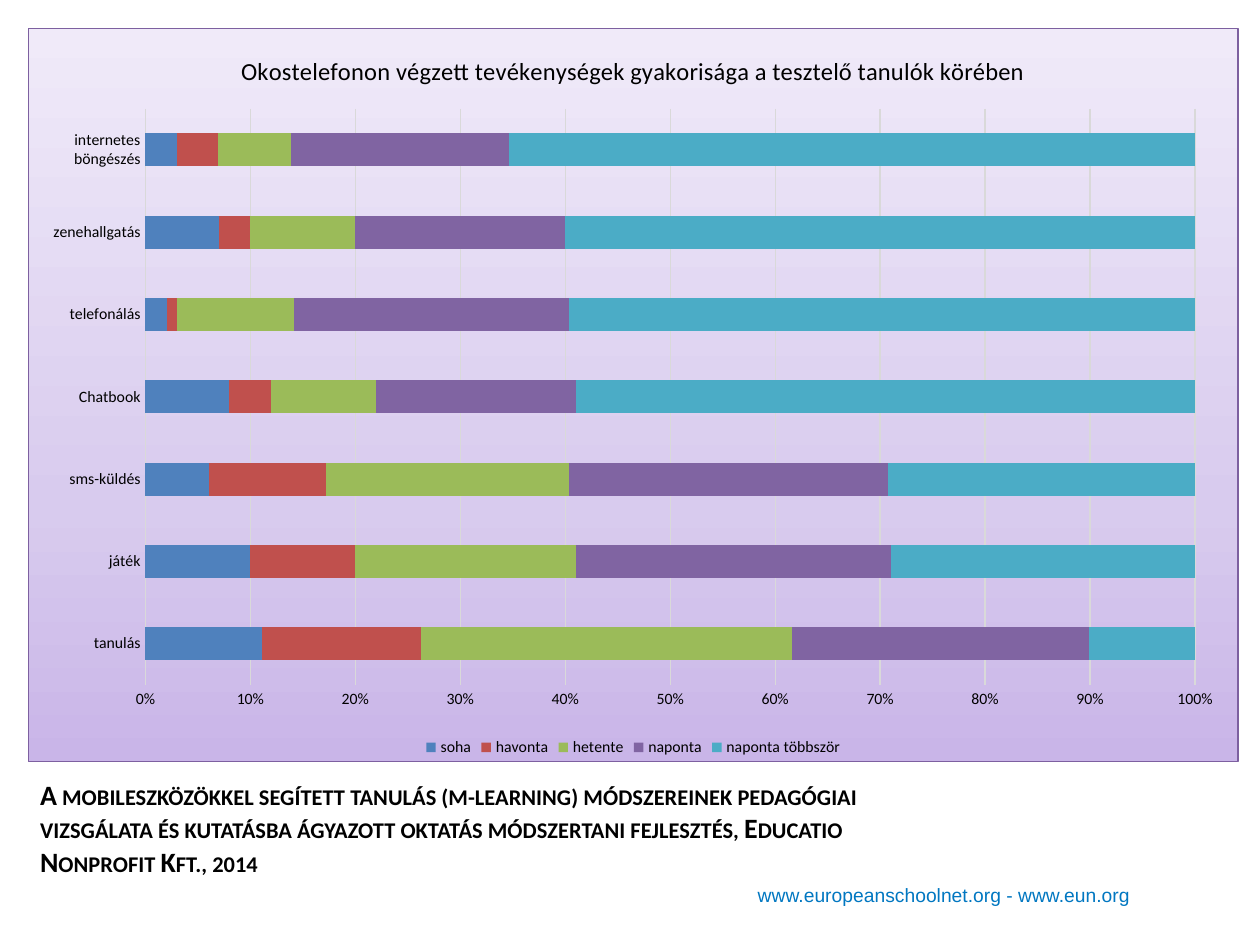
from dataclasses import dataclass, field

from lxml import etree
from pptx import Presentation
from pptx.chart.data import CategoryChartData
from pptx.dml.color import RGBColor
from pptx.enum.chart import XL_CHART_TYPE as ChartType, XL_LEGEND_POSITION as LegendPos
from pptx.enum.chart import XL_TICK_MARK as Tick
from pptx.enum.text import MSO_ANCHOR as Anchor, PP_ALIGN as Align
from pptx.oxml import parse_xml
from pptx.oxml.ns import nsdecls, qn
from pptx.util import Inches, Pt

BLACK, GRID = "000000", "D9D9D9"


@dataclass
class Series:
    name: str
    color: str
    values: tuple


@dataclass
class Label:
    text: str
    box: tuple
    font: dict
    align: Align = Align.LEFT
    anchor: Anchor = Anchor.TOP
    run_attrs: dict = field(default_factory=dict)


CATEGORIES = ["tanulás", "játék", "sms-küldés", "Chatbook", "telefonálás",
              "zenehallgatás", "internetes böngészés"]
SERIES = [
    Series("soha", "4F81BD", (11, 10, 6, 8, 2, 7, 3)),
    Series("havonta", "C0504D", (15, 10, 11, 4, 1, 3, 4)),
    Series("hetente", "9BBB59", (35, 21, 23, 10, 11, 10, 7)),
    Series("naponta", "8064A2", (28, 30, 30, 19, 26, 20, 21)),
    Series("naponta többször", "4BACC6", (10, 29, 29, 59, 59, 60, 66)),
]
TITLE = "Okostelefonon végzett tevékenységek gyakorisága a tesztelő tanulók körében"
GRADIENT = [(0, "C9B5E8"), (35, "D8CBEE"), (100, "F0EAF9")]
CHART_BOX = (0.22, 0.22, 9.61, 5.83)
PLOT_BOX = (0.93, 0.64, 8.34, 4.58)  # inches inside the chart

SOURCE = Label(
    "A mobileszközökkel segített tanulás (m-learning) módszereinek pedagógiai "
    "vizsgálata és kutatásba ágyazott oktatás módszertani fejlesztés, "
    "Educatio Nonprofit Kft., 2014",
    (0.22, 6.12, 6.69, 0.91), {"name": "Calibri", "size": Pt(16), "bold": True},
    run_attrs={"cap": "small"})
WEB = Label("www.europeanschoolnet.org - www.eun.org", (5.63, 6.96, 3.44, 0.29),
            {"name": "Arial", "size": Pt(11), "color": "0177C1"}, Align.RIGHT, Anchor.MIDDLE)


def rgb(value: str) -> RGBColor:
    return RGBColor.from_string(value)


def set_font(font, color: str = BLACK, **values) -> None:
    for name, value in values.items():
        setattr(font, name, value)
    font.color.rgb = rgb(color)


def add_outline(s, box: tuple):
    """Invisible rectangular outline that carries text."""
    x, y, w, h = map(Inches, box)
    builder = s.shapes.build_freeform(x, y)
    builder.add_line_segments([(x + w, y), (x + w, y + h), (x, y + h)], close=True)
    sp = builder.convert_to_shape()
    sp.shadow.inherit = False
    sp.fill.background()
    sp.line.fill.background()
    return sp


def write_label(sp, label: Label) -> None:
    tf = sp.text_frame
    tf.word_wrap, tf.vertical_anchor = True, label.anchor
    p = tf.paragraphs[0]
    p.alignment = label.align
    r = p.add_run()
    r.text = label.text
    set_font(r.font, **label.font)
    for name, value in label.run_attrs.items():
        r.font._element.set(name, value)


def style_background(chart) -> None:
    """Gradient fill and border of the whole chart area."""
    stops = "".join(f'<a:gs pos="{pos * 1000}"><a:srgbClr val="{color}"/></a:gs>'
                    for pos, color in GRADIENT)
    chart._chartSpace.find(qn("c:chart")).addnext(parse_xml(
        f'<c:spPr {nsdecls("c", "a")}><a:gradFill><a:gsLst>{stops}</a:gsLst>'
        f'<a:lin ang="16200000" scaled="1"/></a:gradFill><a:ln w="{Pt(0.75)}">'
        '<a:solidFill><a:srgbClr val="7D60A0"/></a:solidFill></a:ln></c:spPr>'))


def place_plot(chart) -> None:
    """Fixed inner plot area, as fractions of the chart."""
    area = chart._chartSpace.find(qn("c:chart")).find(qn("c:plotArea"))
    for old in area.findall(qn("c:layout")):
        area.remove(old)
    layout = etree.Element(qn("c:layout"))
    manual = etree.SubElement(layout, qn("c:manualLayout"))
    width, height = CHART_BOX[2:]
    settings = {"layoutTarget": "inner", "xMode": "edge", "yMode": "edge"}
    for tag, part, whole in zip("xywh", PLOT_BOX, (width, height) * 2):
        settings[tag] = part / whole
    for tag, value in settings.items():
        etree.SubElement(manual, qn(f"c:{tag}")).set("val", str(value))
    area.insert(0, layout)


def add_frequency_chart(s) -> None:
    data = CategoryChartData(number_format="0")
    data.categories = CATEGORIES
    for series in SERIES:
        data.add_series(series.name, series.values)
    box = map(Inches, CHART_BOX)
    chart = s.shapes.add_chart(ChartType.BAR_STACKED_100, *box, data).chart
    set_font(chart.font, name="Calibri", size=Pt(10))

    # Title and legend
    chart.has_title = True
    tf = chart.chart_title.text_frame
    tf.text = TITLE
    set_font(tf.paragraphs[0].runs[0].font, name="Calibri", size=Pt(14), bold=False)
    chart.has_legend = True
    chart.legend.position = LegendPos.BOTTOM
    chart.legend.include_in_layout = False
    set_font(chart.legend.font, name="Calibri", size=Pt(9))

    # Bars
    plot = chart.plots[0]
    plot.gap_width, plot.overlap, plot.vary_by_categories = 150, 100, False
    for bars, series in zip(plot.series, SERIES):
        bars.format.fill.solid()
        bars.format.fill.fore_color.rgb = rgb(series.color)

    # Axes
    cat, val = chart.category_axis, chart.value_axis
    for axis in (cat, val):
        axis.major_tick_mark = axis.minor_tick_mark = Tick.NONE
        set_font(axis.tick_labels.font, name="Calibri", size=Pt(9))
    val.tick_labels.number_format = "0%"
    val.tick_labels.number_format_is_linked = False
    val.has_major_gridlines = True
    val.format.line.fill.background()
    for line in (cat.format.line, val.major_gridlines.format.line):
        line.color.rgb, line.width = rgb(GRID), Pt(0.75)

    style_background(chart)
    place_plot(chart)


def main() -> None:
    prs = Presentation()
    prs.slide_width, prs.slide_height = Inches(10), Inches(7.5)
    s = prs.slides.add_slide(prs.slide_layouts[6])
    # Web addresses, chart, then its source
    write_label(add_outline(s, WEB.box), WEB)
    add_frequency_chart(s)
    write_label(s.shapes.add_textbox(*map(Inches, SOURCE.box)), SOURCE)
    prs.save("out.pptx")


if __name__ == "__main__":
    main()
